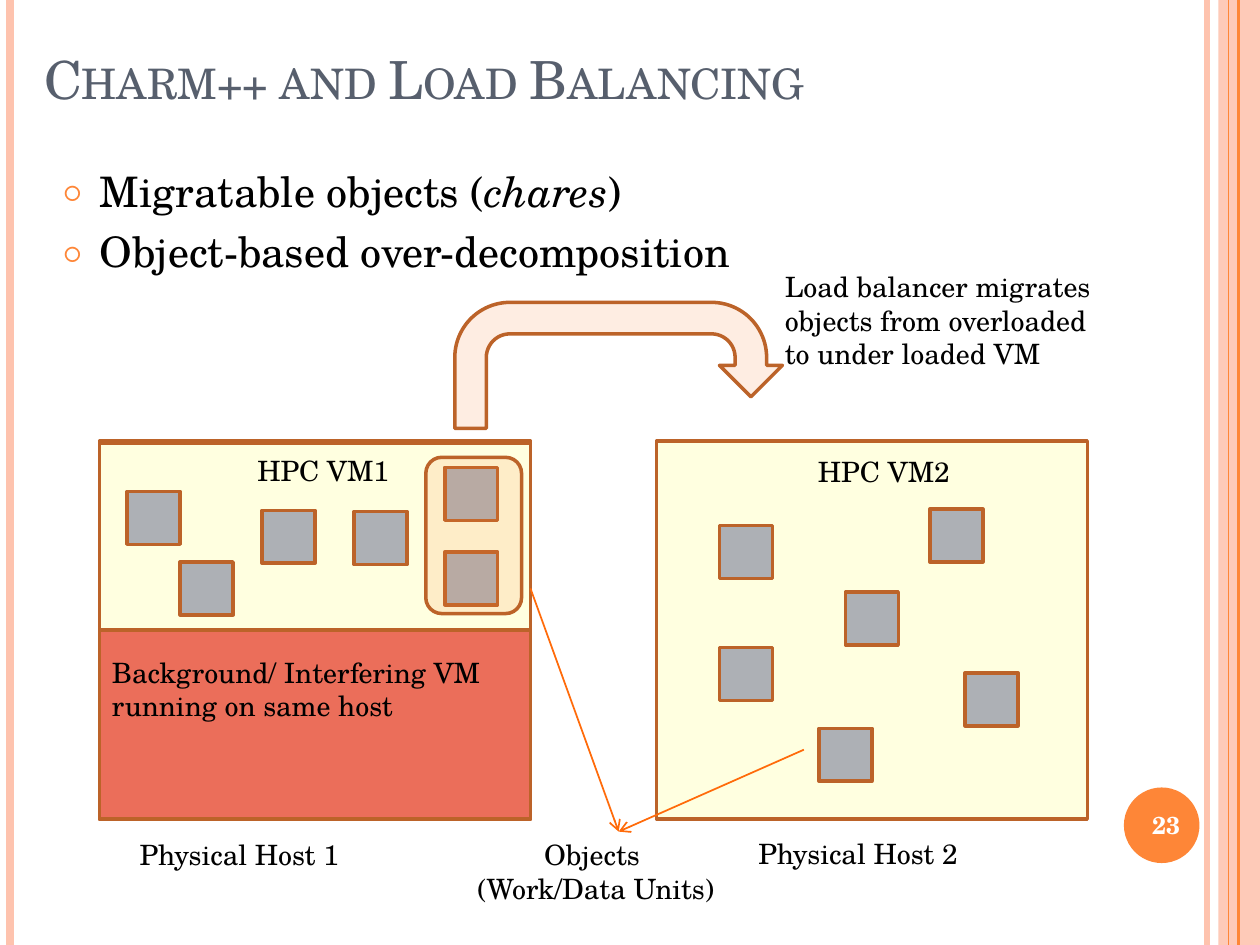
"""Build the slide on load balancing of migratable objects between two virtual machines."""
import lxml.etree
import pptx
import pptx.dml.color
import pptx.enum.shapes
import pptx.enum.text
import pptx.oxml
import pptx.oxml.ns
import pptx.util

SHAPE = pptx.enum.shapes.MSO_SHAPE
ALIGN = pptx.enum.text.PP_ALIGN
ANCHOR = pptx.enum.text.MSO_ANCHOR
RGB = pptx.dml.color.RGBColor.from_string
Pt = pptx.util.Pt
qn = pptx.oxml.ns.qn

THEME = {
    "font": "TeX Gyre Schola",
    "title": "575F6D", "text": "000000", "white": "FFFFFF",
    "accent": "FE8637", "pale": "FEC3AE", "arrow": "FF6B0A",
    "outline": "BC6329", "vm": "FFFF00", "busy": "EB6E5A", "object": "ADB0B5",
    "title_size": 30, "body_size": 24, "label_size": 16, "number_size": 14,
}

prs = pptx.Presentation()
prs.slide_width = pptx.util.Inches(10)
prs.slide_height = pptx.util.Inches(7.5)
s = prs.slides.add_slide(prs.slide_layouts[1])
cell = prs.slide_width / 100
rows = prs.slide_height / cell


def add_shape(kind, box, fill=None, alpha=100, outlined=True):
    sp = s.shapes.add_shape(kind, *[int(v * cell) for v in box])
    sp.shadow.inherit = False
    if fill:
        sp.fill.solid()
        sp.fill.fore_color.rgb = RGB(THEME[fill])
        if alpha < 100:
            color = sp.fill._xPr.find(".//" + qn("a:srgbClr"))
            lxml.etree.SubElement(color, qn("a:alpha"), val=str(alpha * 1000))
    else:
        sp.fill.background()
    if outlined:
        sp.line.color.rgb = RGB(THEME["outline"])
        sp.line.width = Pt(2)
    else:
        sp.line.fill.background()


def write(sp, box, lines, color="text", size="label_size", align=ALIGN.LEFT, frame=None, font=None):
    sp.left, sp.top, sp.width, sp.height = [int(v * cell) for v in box]
    tf = sp.text_frame
    settings = {"word_wrap": True, "auto_size": pptx.enum.text.MSO_AUTO_SIZE.NONE,
                "vertical_anchor": ANCHOR.TOP, **(frame or {})}
    for name, value in settings.items():
        setattr(tf, name, value)
    for i, runs in enumerate(lines):
        p = tf.add_paragraph() if i else tf.paragraphs[0]
        p.alignment = align
        for text, italic in runs:
            r = p.add_run()
            r.text = text
            values = {"name": THEME["font"], "size": Pt(THEME[size]), "italic": italic, **(font or {})}
            for name, value in values.items():
                setattr(r.font, name, value)
            r.font.color.rgb = RGB(THEME[color])
    return tf


tf = write(s.shapes.title, (2.5, -3.3, 96.7, 12.5), [[("Charm++ and Load Balancing", None)]],
           "title", "title_size", frame={"vertical_anchor": ANCHOR.BOTTOM})
tf.paragraphs[0].runs[0].font._element.set("cap", "small")

tf = write(s.placeholders[1], (3.9, 12.6, 81.7, 53.3),
           [[("Migratable objects (", None), ("chares", True), (")", None)],
            [("Object-based over-decomposition", None)]], size="body_size")
for p in tf.paragraphs:
    p.space_before = Pt(6)
    pPr = p._p.get_or_add_pPr()
    pPr.set("marL", str(int(3 * cell)))
    pPr.set("indent", str(int(-3 * cell)))
    color = lxml.etree.SubElement(pPr, qn("a:buClr"))
    lxml.etree.SubElement(color, qn("a:srgbClr"), val=THEME["accent"])
    lxml.etree.SubElement(pPr, qn("a:buSzPct"), val="70000")
    lxml.etree.SubElement(pPr, qn("a:buFont"), typeface=THEME["font"])
    lxml.etree.SubElement(pPr, qn("a:buChar"), char="○")

add_shape(SHAPE.RECTANGLE, (96.7, 0, 3.3, rows), "pale", 87, False)
add_shape(SHAPE.OVAL, (89.2, 62.5, 6, 6), "accent", outlined=False)

host_w, host_h, host_top = 34.2, 30, 35
host1, host2 = 7.9, 52.1
add_shape(SHAPE.RECTANGLE, (host1, host_top + 0.2, host_w, host_h / 2), "vm", 12)
add_shape(SHAPE.RECTANGLE, (host1, host_top, host_w, host_h))
add_shape(SHAPE.RECTANGLE, (host2, host_top, host_w, host_h), "vm", 12)
add_shape(SHAPE.RECTANGLE, (host1, host_top + host_h / 2, host_w, host_h / 2), "busy")

vm1_objects = [(10.1, 39), (14.3, 44.6), (20.8, 40.5), (28.1, 40.6), (35.3, 37.1), (35.3, 43.8)]
vm2_objects = [(57.1, 41.7), (57.1, 51.4), (67.1, 47), (73.8, 40.4), (76.6, 53.4), (65, 57.8)]
for left, top in vm1_objects + vm2_objects:
    add_shape(SHAPE.RECTANGLE, (left, top, 4.2, 4.2), "object")
add_shape(SHAPE.ROUNDED_RECTANGLE, (33.8, 36.3, 7.6, 12.4), "accent", 14)
add_shape(SHAPE.U_TURN_ARROW, (36.1, 24, 26, 10), "accent", 14)

target = (49.1, 66)
for start, end, color, width, head in [
    ((95.8, 0), (95.8, rows), "pale", 3, False),
    ((0.8, 0), (0.8, rows), "pale", 4.5, False),
    ((98.3, 0), (98.3, rows), "accent", 1.5, False),
    ((97.5, 0), (97.5, rows), "accent", 0.75, False),
    ((42.1, 46.7), target, "arrow", 1, True),
    ((63.8, 59.5), target, "arrow", 1, True),
]:
    line = s.shapes.add_connector(pptx.enum.shapes.MSO_CONNECTOR.STRAIGHT,
                                  *[int(v * cell) for v in start + end])
    line.line.color.rgb = RGB(THEME[color])
    line.line.width = Pt(width)
    if head:
        lxml.etree.SubElement(line.line._get_or_add_ln(), qn("a:tailEnd"), type="arrow")
    lxml.etree.SubElement(line._element.spPr, qn("a:effectLst"))

for box, lines, align in [
    ((7.9, 51.5, 36.8, 6.4), ["Background/ Interfering VM running on same host"], ALIGN.LEFT),
    ((30.5, 66, 33.6, 6.4), ["Objects ", "(Work/Data Units)"], ALIGN.CENTER),
    ((61.3, 20.9, 29.1, 9.1),
     ["Load balancer migrates objects from overloaded", "to under loaded VM"], ALIGN.LEFT),
    ((10.1, 66, 29.8, 3.7), ["Physical Host 1"], ALIGN.LEFT),
    ((59.2, 65.9, 27.1, 3.7), ["Physical Host 2"], ALIGN.LEFT),
    ((15.2, 35.5, 20.9, 3.7), ["HPC VM1"], ALIGN.CENTER),
    ((59.7, 35.6, 20.9, 3.7), ["HPC VM2"], ALIGN.CENTER),
]:
    write(s.shapes.add_textbox(0, 0, 0, 0), box, [[(text, None)] for text in lines], align=align,
          frame={"auto_size": pptx.enum.text.MSO_AUTO_SIZE.SHAPE_TO_FIT_TEXT})

write(s.shapes.add_textbox(0, 0, 0, 0), (89.2, 62.6, 6.7, 5.7), [[("23", None)]], "white",
      "number_size", ALIGN.CENTER, {"vertical_anchor": ANCHOR.MIDDLE}, {"bold": True})

prs.save("out.pptx")
